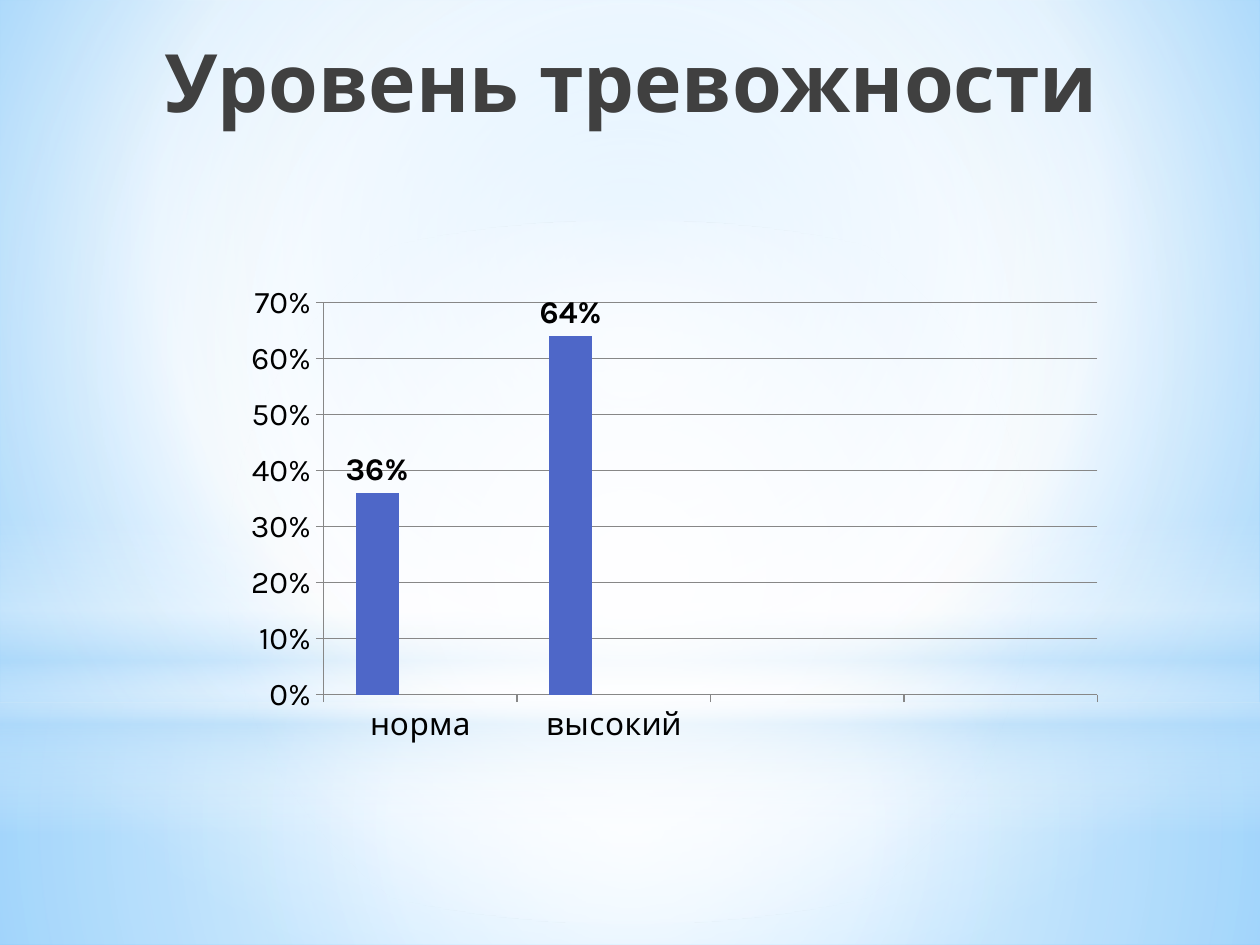
from lxml import etree
from pptx import Presentation
from pptx import util as u
from pptx.chart import data
from pptx.dml.color import RGBColor
from pptx.enum import chart as charts, shapes, text
from pptx.oxml.ns import qn

FONT = "Karla"
CENTRE = (50, 50, 50, 50)
AXIS_GREY = "878787"


def colour(value):
    """Turn a hex string into a colour."""
    return RGBColor.from_string(value)


def add_node(parent, tag, **attributes):
    """Append a drawing element with the given attributes."""
    values = {name: str(value) for name, value in attributes.items()}
    return etree.SubElement(parent, qn(f"a:{tag}"), values)


def set_gradient(owner, fill, stops, focus=None):
    """Fill with (position, colour, opacity) stops, round a focus or downwards."""
    fill.gradient()
    gradient = next(owner.element.iter(qn("a:gradFill")))
    for child in list(gradient):
        gradient.remove(child)
    stop_list = add_node(gradient, "gsLst")
    for position, value, opacity in stops:
        stop = add_node(stop_list, "gs", pos=position * 1000)
        shade = add_node(stop, "srgbClr", val=value)
        if opacity < 100:
            add_node(shade, "alpha", val=opacity * 1000)
    if focus:
        route = add_node(gradient, "path", path="circle")
        sides = {side: size * 1000 for side, size in zip("ltrb", focus)}
        add_node(route, "fillToRect", **sides)
    else:
        add_node(gradient, "lin", ang=90 * 60000, scaled=0)


def add_glow(page, kind, place, stops, focus=None):
    """Add a borderless shape with a translucent gradient."""
    glow = page.shapes.add_shape(kind, *map(u.Cm, place))
    glow.shadow.inherit = False
    glow.line.fill.background()
    set_gradient(glow, glow.fill, stops, focus)


def add_backdrop(page):
    """Paint the sky background and its layers of light."""
    set_gradient(page, page.background.fill,
                 [(0, "9ED5FF", 100), (60, "FFFFFF", 100), (100, "5BB9FF", 100)],
                 (20, 10, 20, 60))
    rectangle = shapes.MSO_SHAPE.RECTANGLE
    add_glow(page, rectangle, (0, 14.17, 25.4, 4.88),
             [(0, "FFFFFF", 91), (37, "FFFFFF", 76), (100, "B4DCFA", 79)], CENTRE)
    add_glow(page, rectangle, (0, 0, 25.4, 14.17),
             [(0, "FFFFFF", 89), (48, "FFFFFF", 62), (100, "B4DCFA", 79)], CENTRE)
    add_glow(page, rectangle, (0, 10.46, 25.4, 6.35),
             [(0, "FFFFFF", 0), (29, "FFFFFF", 30), (45, "B4DCFA", 40),
              (55, "FFFFFF", 26), (65, "B4DCFA", 60), (100, "FFFFFF", 0)])
    add_glow(page, shapes.MSO_SHAPE.OVAL, (0, 4.45, 25.4, 14.17),
             [(0, "FFFFFF", 100), (56, "FFFFFF", 0)], CENTRE)


def set_font(font, size, value, bold=False):
    """Set the typeface, size, colour and weight of a font."""
    font.name = FONT
    font.size = u.Pt(size)
    font.bold = bold
    font.color.rgb = colour(value)


def add_title(page, wording):
    """Add the right-aligned heading."""
    box = page.shapes.add_textbox(u.Cm(0.89), u.Cm(0.53), u.Cm(21.49), u.Cm(3.18))
    frame = box.text_frame
    frame.word_wrap = True
    frame.vertical_anchor = text.MSO_ANCHOR.TOP
    para = frame.paragraphs[0]
    para.alignment = text.PP_ALIGN.RIGHT
    span = para.add_run()
    span.text = wording
    set_font(span.font, 46, "404040", bold=True)


def style_axis(axis):
    """Give an axis its line and outer ticks."""
    axis.format.line.color.rgb = colour(AXIS_GREY)
    axis.major_tick_mark = charts.XL_TICK_MARK.OUTSIDE
    axis.minor_tick_mark = charts.XL_TICK_MARK.NONE


def add_anxiety_chart(page):
    """Add the column chart of anxiety levels."""
    levels = data.CategoryChartData(number_format="0%")
    levels.categories = ["норма", "высокий", "", ""]
    levels.add_series("Series 1", (0.36, 0.64, None, None))
    for name in ("Series 2", "Series 3"):
        levels.add_series(name, (None,) * 4)
    frame = page.shapes.add_chart(
        charts.XL_CHART_TYPE.COLUMN_CLUSTERED,
        u.Cm(4.7), u.Cm(5.54), u.Cm(17.78), u.Cm(9.65), levels)
    chart = frame.chart
    chart.has_legend = False
    chart.has_title = False
    set_font(chart.font, 18, "000000")

    style_axis(chart.category_axis)
    scale = chart.value_axis
    style_axis(scale)
    scale.minimum_scale, scale.maximum_scale, scale.major_unit = 0, 0.7, 0.1
    scale.has_major_gridlines = True
    scale.major_gridlines.format.line.color.rgb = colour(AXIS_GREY)
    scale.tick_labels.number_format = "0%"
    scale.tick_labels.number_format_is_linked = False

    plot = chart.plots[0]
    plot.gap_width = 150
    plot.vary_by_categories = False
    for series, value in zip(plot.series, ("4E67C8", "5ECCF3", "A7EA52")):
        series.format.fill.solid()
        series.format.fill.fore_color.rgb = colour(value)
    labels = plot.series[0].data_labels
    labels.show_value = True
    labels.number_format = "0%"
    labels.number_format_is_linked = False
    labels.position = charts.XL_LABEL_POSITION.OUTSIDE_END
    set_font(labels.font, 18, "000000", bold=True)


def main():
    """Build and save the slide."""
    deck = Presentation()
    deck.slide_width, deck.slide_height = u.Cm(25.4), u.Cm(19.05)
    page = deck.slides.add_slide(deck.slide_layouts[6])
    add_backdrop(page)
    add_title(page, "Уровень тревожности")
    add_anxiety_chart(page)
    deck.save("out.pptx")


if __name__ == "__main__":
    main()
